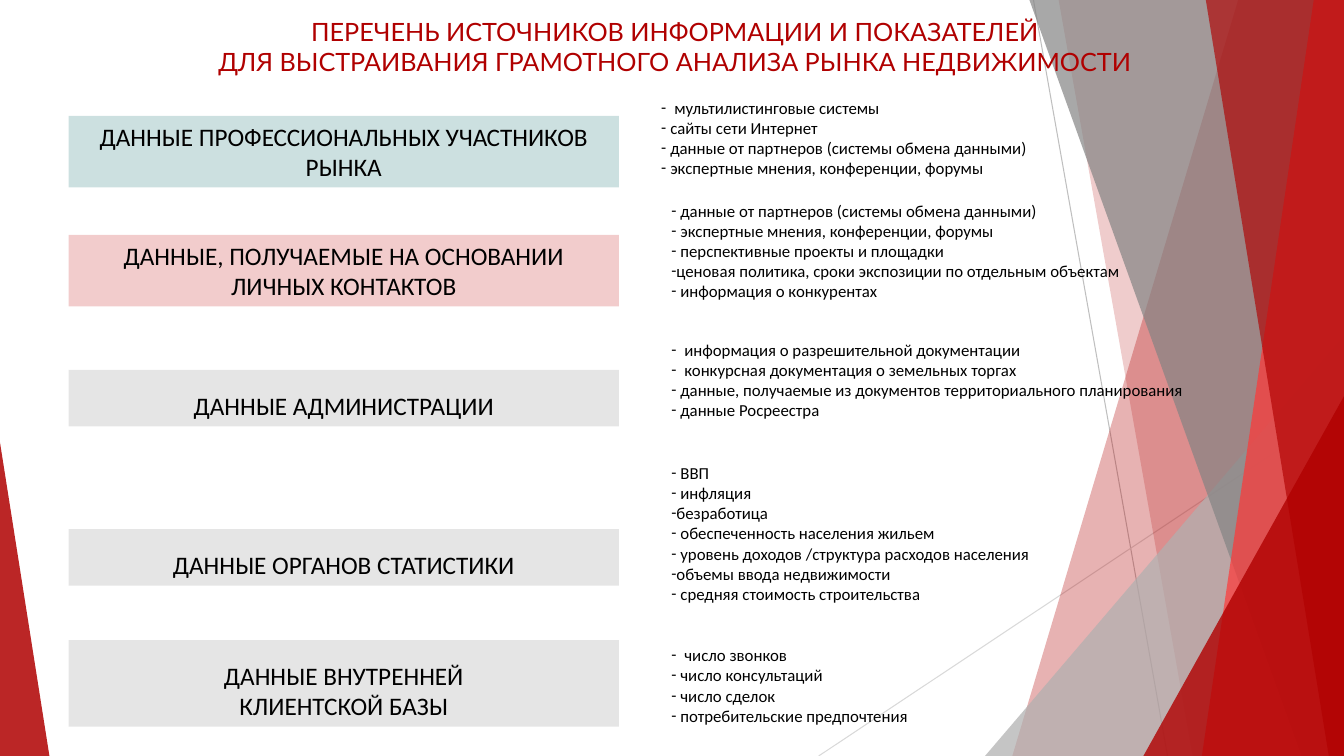
from lxml import etree
from pptx import Presentation
from pptx.dml.color import RGBColor as RGB
from pptx.enum.shapes import MSO_CONNECTOR as CONN, MSO_SHAPE as SHAPE
from pptx.enum.text import MSO_ANCHOR as ANCHOR, MSO_AUTO_SIZE as FIT, PP_ALIGN as ALIGN
from pptx.oxml.ns import qn
from pptx.util import Inches, Pt

W, H = 13.33, 7.5
COLORS = {
    "red": "B00000", "bright": "FF3737", "silver": "B0B0B0", "gray": "848484",
    "line_dark": "BFBFBF", "line_light": "D9D9D9", "text": "000000",
    "teal_box": "006666", "red_box": "C00000", "gray_box": "808080",
}
TITLE_FONT = {"name": "Lato", "size": Pt(18)}
LABEL_FONT = {"name": "Calibri", "size": Pt(18)}
ITEM_FONT = {"name": "Calibri", "size": Pt(12)}
FRAME = {"word_wrap": True, "auto_size": FIT.SHAPE_TO_FIT_TEXT, "vertical_anchor": ANCHOR.TOP}
CENTER = {"alignment": ALIGN.CENTER}
BULLET_GAPS = {0: 0, 1: 0.09, 2: 0.13}

TITLE = ["ПЕРЕЧЕНЬ ИСТОЧНИКОВ ИНФОРМАЦИИ И ПОКАЗАТЕЛЕЙ",
         "ДЛЯ ВЫСТРАИВАНИЯ ГРАМОТНОГО АНАЛИЗА РЫНКА НЕДВИЖИМОСТИ"]
LABEL_LEFT, LABEL_WIDTH = 0.68, 5.46
SOURCES = [
    (["ДАННЫЕ ПРОФЕССИОНАЛЬНЫХ УЧАСТНИКОВ РЫНКА"], "teal_box", 1.15, 0.71, 1,
     (6.46, 0.92, 6.67, 0.91),
     [(2, "мультилистинговые системы"), (1, "сайты сети Интернет"),
      (1, "данные от партнеров (системы обмена данными)"),
      (1, "экспертные мнения, конференции, форумы")]),
    (["ДАННЫЕ, ПОЛУЧАЕМЫЕ НА ОСНОВАНИИ ЛИЧНЫХ КОНТАКТОВ"], "red_box", 2.33, 0.71, 1,
     (6.56, 1.94, 6.77, 1.11),
     [(1, "данные от партнеров (системы обмена данными)"),
      (1, "экспертные мнения, конференции, форумы"),
      (1, "перспективные проекты и площадки"),
      (0, "ценовая политика, сроки экспозиции по отдельным объектам"),
      (1, "информация о конкурентах")]),
    (["ДАННЫЕ АДМИНИСТРАЦИИ"], "gray_box", 3.67, 0.56, 1.5,
     (6.56, 3.32, 6.77, 0.91),
     [(2, "информация о разрешительной документации"),
      (2, "конкурсная документация о земельных торгах"),
      (1, "данные, получаемые из документов территориального планирования"),
      (1, "данные Росреестра")]),
    (["ДАННЫЕ ОРГАНОВ СТАТИСТИКИ"], "gray_box", 5.25, 0.56, 1.5,
     (6.56, 4.54, 4.72, 1.51),
     [(1, "ВВП"), (1, "инфляция"), (0, "безработица"),
      (1, "обеспеченность населения жильем"),
      (1, "уровень доходов /структура расходов населения"),
      (0, "объемы ввода недвижимости"), (1, "средняя стоимость строительства")]),
    (["ДАННЫЕ ВНУТРЕННЕЙ", "КЛИЕНТСКОЙ БАЗЫ"], "gray_box", 6.35, 0.86, 1.5,
     (6.56, 6.35, 4.94, 0.91),
     [(2, "число звонков"), (1, "число консультаций"), (1, "число сделок"),
      (1, "потребительские предпочтения")]),
]


def color(name):
    """Return the palette colour as an RGB value."""
    return RGB.from_string(COLORS[name])


def apply(obj, fmt):
    """Set every attribute in fmt on obj."""
    for key, value in fmt.items():
        setattr(obj, key, value)


def paint(sp, name, opacity):
    """Give a shape a translucent fill without line or shadow."""
    sp.shadow.inherit = False
    sp.line.fill.background()
    sp.fill.solid()
    sp.fill.fore_color.rgb = color(name)
    clr = sp.element.spPr.find(qn("a:solidFill")).find(qn("a:srgbClr"))
    etree.SubElement(clr, qn("a:alpha")).set("val", str(opacity * 1000))


def write(sp, lines, font, name="text", fmt=None):
    """Write one paragraph per line and return the paragraphs."""
    tf = sp.text_frame
    apply(tf, FRAME)
    for i, line in enumerate(lines):
        p = tf.paragraphs[0] if i == 0 else tf.add_paragraph()
        apply(p, fmt or {})
        r = p.add_run()
        r.text = line
        apply(r.font, font)
        r.font.color.rgb = color(name)
    return tf.paragraphs


def add_line(s, start, end, name):
    """Draw a thin straight line."""
    line = s.shapes.add_connector(CONN.STRAIGHT, *map(Inches, start + end))
    line.line.width = Pt(0.75)
    line.line.color.rgb = color(name)
    etree.SubElement(line.element.spPr, qn("a:effectLst"))


def add_band(s, top_x, bottom_x, name, opacity):
    """Draw a full-height band from a slanted left edge to the slide's right edge."""
    points = [(Inches(x), Inches(y)) for x, y in
              [(top_x, 0), (W, 0), (W, H), (bottom_x, H)]]
    builder = s.shapes.build_freeform(*points[0], scale=1.0)
    builder.add_line_segments(points[1:], close=True)
    paint(builder.convert_to_shape(), name, opacity)


def add_corner(s, left, top, width, apex, name, opacity):
    """Draw a right triangle standing on the slide's bottom edge."""
    sp = s.shapes.add_shape(SHAPE.ISOSCELES_TRIANGLE,
                            *map(Inches, (left, top, width, H - top)))
    sp.adjustments[0] = apex
    paint(sp, name, opacity)


def add_facets(s):
    """Draw the layered facets behind the content."""
    add_line(s, (10.25, 0), (11.58, H), "line_dark")
    add_line(s, (W, 4.03), (8.12, H), "line_light")
    add_band(s, 12.28, 10.04, "red", 30)
    add_band(s, 10.5, 11.83, "red", 20)
    add_corner(s, 9.77, 3.33, 3.56, 1, "silver", 72)
    add_band(s, 10.21, 12.91, "gray", 70)
    add_band(s, 13.03, 11.92, "bright", 70)
    add_band(s, 11.96, 13.18, "red", 65)
    add_corner(s, 11.34, 3.93, 1.99, 1, "red", 80)
    add_corner(s, 0, 4.39, 0.49, 0, "red", 85)


def add_title(s, box):
    """Write the centred heading."""
    write(s.shapes.add_textbox(*map(Inches, box)), TITLE, TITLE_FONT, "red", CENTER)


def add_label(s, box, lines, name, spacing):
    """Draw the tinted box that names a source."""
    sp = s.shapes.add_shape(SHAPE.RECTANGLE, *map(Inches, box))
    paint(sp, name, 20)
    paragraphs = write(sp, lines, LABEL_FONT, fmt=CENTER)
    paragraphs[0].line_spacing = float(spacing)


def add_items(s, box, items):
    """Write the dashed list of indicators."""
    sp = s.shapes.add_textbox(*map(Inches, box))
    paragraphs = write(sp, [text for _, text in items], ITEM_FONT)
    for p, (gap, _) in zip(paragraphs, items):
        pPr = p._p.get_or_add_pPr()
        indent = Inches(BULLET_GAPS[gap])
        pPr.set("marL", str(indent))
        pPr.set("indent", str(-indent))
        etree.SubElement(pPr, qn("a:buFont")).set("typeface", "Calibri")
        etree.SubElement(pPr, qn("a:buChar")).set("char", "-")


def main():
    """Build and save the slide."""
    prs = Presentation()
    apply(prs, {"slide_width": Inches(W), "slide_height": Inches(H)})
    s = prs.slides.add_slide(prs.slide_layouts[6])
    add_facets(s)
    add_title(s, (0.23, 0.11, 12.93, 0.71))
    for lines, name, top, height, spacing, items_box, items in SOURCES:
        add_label(s, (LABEL_LEFT, top, LABEL_WIDTH, height), lines, name, spacing)
        add_items(s, items_box, items)
    prs.save("out.pptx")


if __name__ == "__main__":
    main()
